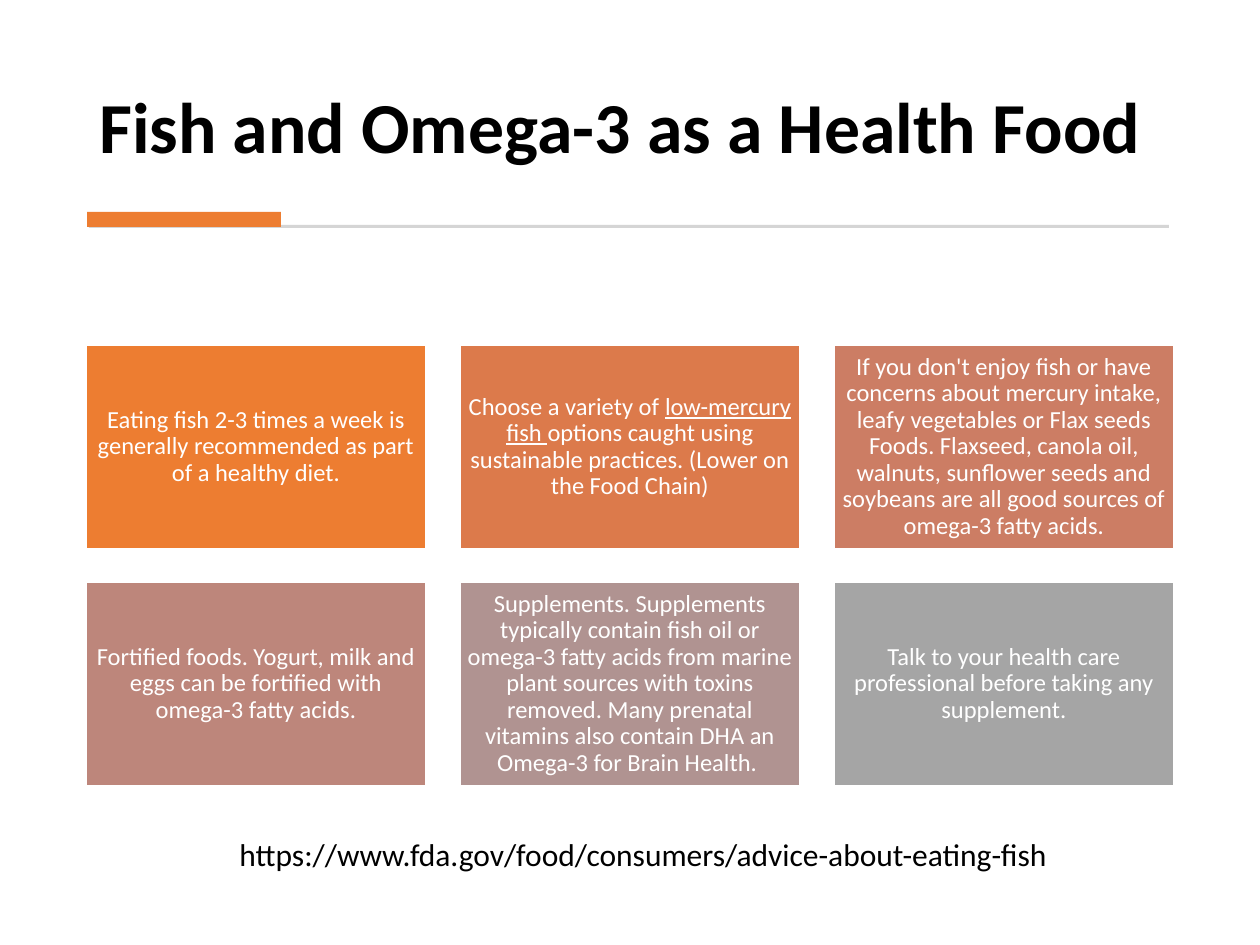
import pptx
import pptx.util
import pptx.dml.color
import pptx.enum.shapes
import pptx.enum.text

RGB = pptx.dml.color.RGBColor
BLACK = RGB(0x00, 0x00, 0x00)
WHITE = RGB(0xFF, 0xFF, 0xFF)
RULE_GREY = RGB(0xD5, 0xD5, 0xD5)
ORANGE = RGB(0xED, 0x7D, 0x31)
RUST = RGB(0xDC, 0x7A, 0x4B)
CORAL = RGB(0xCC, 0x7D, 0x64)
ROSE = RGB(0xBD, 0x86, 0x7B)
MAUVE = RGB(0xB0, 0x93, 0x91)
GREY = RGB(0xA5, 0xA5, 0xA5)

ANCHOR = pptx.enum.text.MSO_ANCHOR
ALIGN = pptx.enum.text.PP_ALIGN

CARDS = [
    (ORANGE, ["Eating fish 2-3 times a week is generally recommended as part of a healthy diet."]),
    (RUST, ["Choose a variety of ", "low-mercury fish ",
            "options caught using sustainable practices. (Lower on the Food Chain)"]),
    (CORAL, ["If you don't enjoy fish or have concerns about mercury intake, leafy vegetables or "
             "Flax seeds Foods. Flaxseed, canola oil, walnuts, sunflower seeds and soybeans are "
             "all good sources of omega-3 fatty acids."]),
    (ROSE, ["Fortified foods. Yogurt, milk and eggs can be fortified with omega-3 fatty acids."]),
    (MAUVE, ["Supplements. Supplements typically contain fish oil or omega-3 fatty acids from "
             "marine plant sources with toxins removed. Many prenatal vitamins also contain DHA "
             "an Omega-3 for Brain Health. "]),
    (GREY, ["Talk to your health care professional before taking any supplement."]),
]


def px(n):
    return pptx.util.Emu(round(n * 914400 / 126))


def apply(obj, values):
    for name, value in values.items():
        setattr(obj, name, value)


class Deck:
    """Holds the text style and the current slide, and draws each kind of element."""

    font = "Calibri"

    def __init__(self, prs):
        self.s = prs.slides.add_slide(prs.slide_layouts[6])

    def add_runs(self, sp, runs, size, color, frame=None, para=None, bold=False):
        tf = sp.text_frame
        apply(tf, {"word_wrap": True, **(frame or {})})
        p = tf.paragraphs[0]
        apply(p, para or {})
        for i, text in enumerate(runs):
            r = p.add_run()
            r.text = text
            apply(r.font, {"name": self.font, "size": pptx.util.Pt(size),
                           "bold": bold, "underline": i % 2 == 1})
            r.font.color.rgb = color

    def text(self, box, text, size, **style):
        sp = self.s.shapes.add_textbox(*map(px, box))
        self.add_runs(sp, [text], size, BLACK, **style)

    def rect(self, box, fill, line=None):
        sp = self.s.shapes.add_shape(pptx.enum.shapes.MSO_SHAPE.RECTANGLE, *map(px, box))
        sp.shadow.inherit = False
        sp.fill.solid()
        sp.fill.fore_color.rgb = fill
        if line is None:
            sp.line.fill.background()
        else:
            sp.line.color.rgb = line
            sp.line.width = pptx.util.Pt(1)
        return sp

    def card(self, box, fill, runs):
        sp = self.rect(box, fill, WHITE)
        sides = ("margin_left", "margin_top", "margin_right", "margin_bottom")
        frame = {"vertical_anchor": ANCHOR.MIDDLE, **dict.fromkeys(sides, px(7))}
        self.add_runs(sp, runs, 14, WHITE, frame,
                      {"alignment": ALIGN.CENTER, "line_spacing": 0.9})


def main():
    prs = pptx.Presentation()
    apply(prs, {"slide_width": px(1260), "slide_height": px(945)})
    deck = Deck(prs)
    deck.text((87, 35, 1086, 140), "Fish and Omega-3 as a Health Food", 41, bold=True,
              frame={"vertical_anchor": ANCHOR.BOTTOM}, para={"line_spacing": 0.9})
    deck.rect((89, 225, 1080, 3), RULE_GREY)
    deck.rect((87, 212, 194, 15), ORANGE)
    for i, (fill, runs) in enumerate(CARDS):
        row, col = divmod(i, 3)
        deck.card((86 + col * 374, 345 + row * 237, 340, 204), fill, runs)
    deck.text((227, 829, 858, 50),
              "https://www.fda.gov/food/consumers/advice-about-eating-fish", 18)
    prs.save("out.pptx")


if __name__ == "__main__":
    main()
